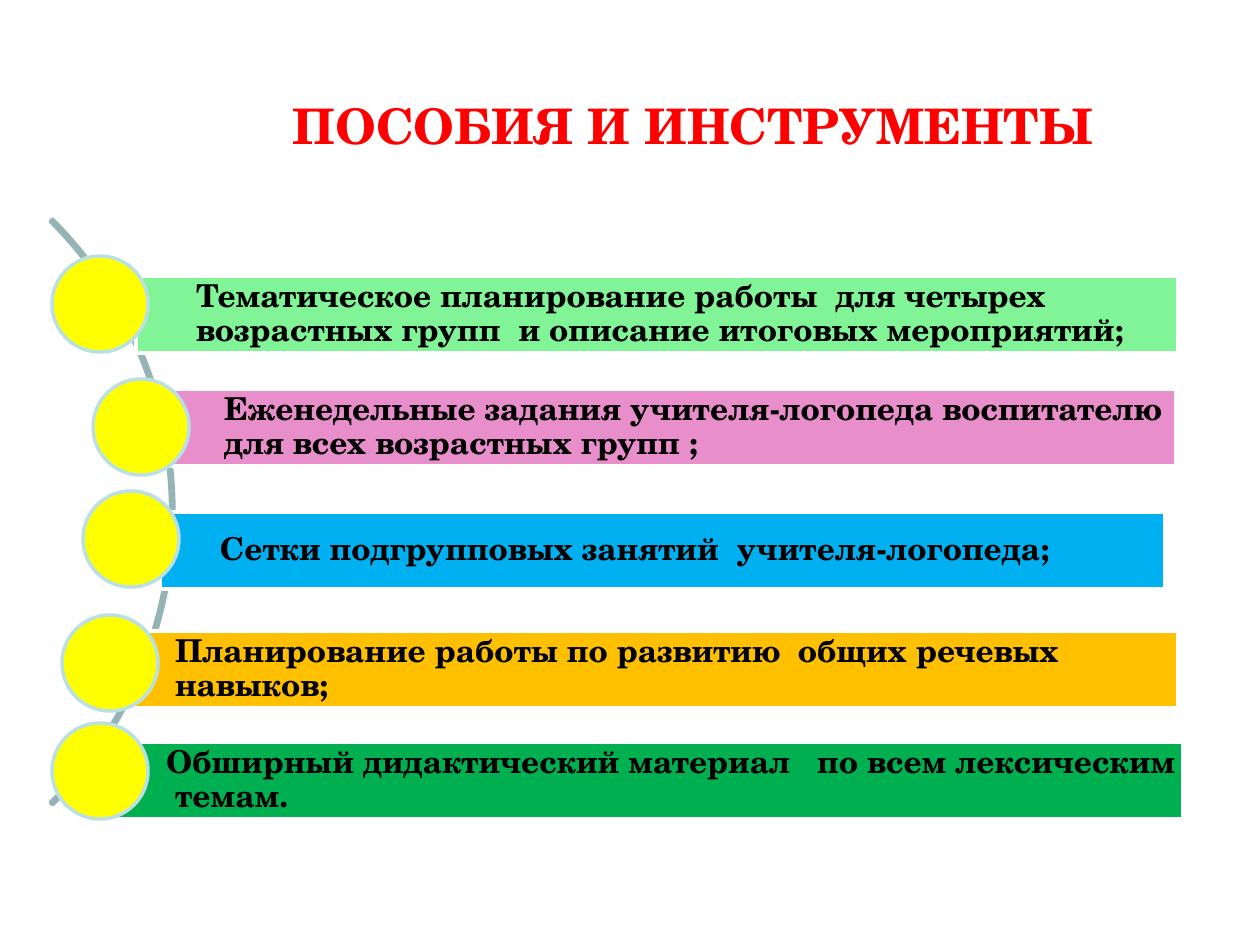
from pptx import Presentation
from pptx.dml.color import RGBColor
from pptx.enum.shapes import MSO_SHAPE
from pptx.enum.text import MSO_ANCHOR, MSO_AUTO_SIZE, PP_ALIGN
from pptx.util import Emu, Pt

RECTANGLE, OVAL, BLOCK_ARC = MSO_SHAPE.RECTANGLE, MSO_SHAPE.OVAL, MSO_SHAPE.BLOCK_ARC
MIDDLE = MSO_ANCHOR.MIDDLE
LEFT, CENTER = PP_ALIGN.LEFT, PP_ALIGN.CENTER
NO_AUTOFIT = MSO_AUTO_SIZE.NONE

EMU_PER_PX = 914400 / 126
FONT = "TeX Gyre Schola"
BAR_HEIGHT = 77
CIRCLE_SIZE = 96
COLORS = {
    "title": "FF0000",
    "text": "000000",
    "arc": "96B3B6",
    "bar_line": "FFFFFF",
    "circle": "FFFF00",
    "circle_line": "BBE0E3",
    "green": "82F498",
    "pink": "E88ECA",
    "blue": "00B0F0",
    "orange": "FFC000",
    "dark_green": "00B050",
}
# text, colour, bar (left, top, width), circle (left, top)
ITEMS = [
    ("Тематическое планирование работы  для четырех возрастных групп  и описание итоговых мероприятий;",
     "green", (136, 276, 1042), (52, 256)),
    ("Еженедельные задания учителя-логопеда воспитателю для всех возрастных групп ;",
     "pink", (164, 389, 1012), (93, 379)),
    ("Сетки подгрупповых занятий  учителя-логопеда;",
     "blue", (160, 512, 1005), (83, 491)),
    ("Планирование работы по развитию  общих речевых навыков;",
     "orange", (115, 631, 1063), (62, 615)),
    ("Обширный дидактический материал   по всем лексическим  темам.",
     "dark_green", (106, 742, 1077), (52, 723)),
]


def px(length):
    return Emu(round(length * EMU_PER_PX))


def color(name):
    return RGBColor.from_string(COLORS[name])


def write_text(shape, text, size, color_name, alignment, insets):
    """Fill the shape with one bold paragraph; insets are left, top, right, bottom."""
    frame = shape.text_frame
    frame.text = text
    frame.word_wrap = True
    frame.auto_size = NO_AUTOFIT
    frame.vertical_anchor = MIDDLE
    frame.margin_left, frame.margin_top, frame.margin_right, frame.margin_bottom = map(px, insets)
    paragraph = frame.paragraphs[0]
    paragraph.alignment = alignment
    font = paragraph.runs[0].font
    font.name, font.size, font.bold = FONT, Pt(size), True
    font.color.rgb = color(color_name)
    return paragraph


def add_title(slide, text):
    title = slide.shapes.title
    title.left, title.top, title.width, title.height = map(px, (189, 81, 1008, 87))
    write_text(title, text, 28, "title", CENTER, (0, 0, 0, 0))


def add_outlined_shape(slide, kind, box, line, fill=None):
    shape = slide.shapes.add_shape(kind, *map(px, box))
    shape.shadow.inherit = False
    shape.line.color.rgb = color(line)
    shape.line.width = Pt(2)
    if fill:
        shape.fill.solid()
        shape.fill.fore_color.rgb = color(fill)
    else:
        shape.fill.background()
    return shape


def add_arc(slide):
    arc = add_outlined_shape(slide, BLOCK_ARC, (-654, 98, 828, 828), "arc")
    # Angles are 315 and 45 degrees, in units of 5/3 degree
    for index, value in enumerate((189, 27, 0.004)):
        arc.adjustments[index] = value


def add_item(slide, text, fill, bar_place, circle_place):
    bar = add_outlined_shape(slide, RECTANGLE, (*bar_place, BAR_HEIGHT), "bar_line", fill)
    paragraph = write_text(bar, text, 18, "text", LEFT, (60, 6, 6, 6))
    paragraph.line_spacing = 0.9
    add_outlined_shape(slide, OVAL, (*circle_place, CIRCLE_SIZE, CIRCLE_SIZE),
                       "circle_line", "circle")


def main():
    presentation = Presentation()
    presentation.slide_width, presentation.slide_height = px(1260), px(945)
    slide = presentation.slides.add_slide(presentation.slide_layouts[5])
    add_title(slide, "ПОСОБИЯ И ИНСТРУМЕНТЫ")
    add_arc(slide)
    for item in ITEMS:
        add_item(slide, *item)
    presentation.save("out.pptx")


if __name__ == "__main__":
    main()
